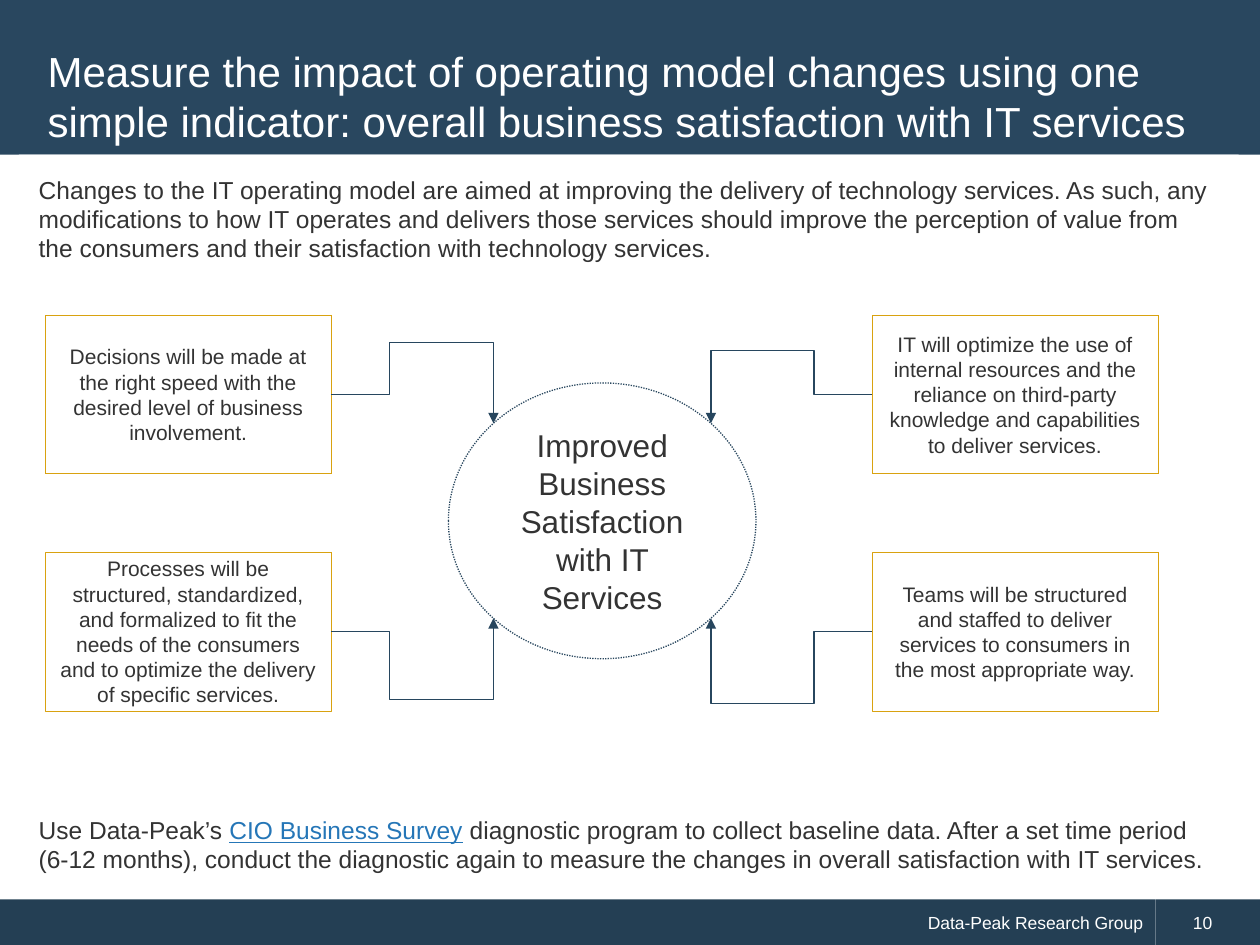
from pptx import Presentation
from pptx.dml.color import RGBColor
from pptx.enum.dml import MSO_LINE
from pptx.enum.shapes import MSO_CONNECTOR, MSO_SHAPE
from pptx.enum.text import MSO_ANCHOR, PP_ALIGN
from pptx.oxml.ns import qn
from pptx.util import Cm, Pt
from lxml import etree

RECT, OVAL = MSO_SHAPE.RECTANGLE, MSO_SHAPE.OVAL
ELBOW = MSO_CONNECTOR.ELBOW
TOP, MIDDLE = MSO_ANCHOR.TOP, MSO_ANCHOR.MIDDLE
LEFT, CENTER, RIGHT = PP_ALIGN.LEFT, PP_ALIGN.CENTER, PP_ALIGN.RIGHT
DOTTED = MSO_LINE.ROUND_DOT

NAVY, FOOT, GOLD, ARROW = "29475F", "243F54", "D9A210", "27465E"
WHITE, TEXT, LINK = "FFFFFF", "333333", "2576B7"

TITLE = ("Measure the impact of operating model changes using one simple indicator: "
         "overall business satisfaction with IT services")
INTRO = ("Changes to the IT operating model are aimed at improving the delivery of technology "
         "services. As such, any modifications to how IT operates and delivers those services "
         "should improve the perception of value from the consumers and their satisfaction "
         "with technology services.")
CLOSING = [
    ("Use Data-Peak’s ", {}),
    ("CIO Business Survey", {"color": LINK, "underline": True}),
    (" diagnostic program to collect baseline data. After a set time period (6-12 months), "
     "conduct the diagnostic again to measure the changes in overall satisfaction with IT "
     "services.", {}),
]
GOAL = "Improved Business Satisfaction with IT Services"
DRIVERS = [
    (0, 0, 6.9, "Decisions will be made at the right speed with the desired level of business "
                "involvement."),
    (0, 1, 14.1, "Processes will be structured, standardized, and formalized to fit the needs of "
                 "the consumers and to optimize the delivery of specific services."),
    (1, 0, 7.06, "IT will optimize the use of internal resources and the reliance on third-party "
                 "knowledge and capabilities to deliver services."),
    (1, 1, 14.18, "Teams will be structured and staffed to deliver services to consumers in the "
                  "most appropriate way."),
]

BOX_X, BOX_Y = (0.91, 17.58), (6.35, 11.13)
BOX_W, BOX_H = 5.77, 3.2
GOAL_BOX = (9.04, 7.72, 6.2, 5.56)
DIAGONAL = 0.5 ** 0.5
BEND = 0.36


def rgb(color):
    return RGBColor.from_string(color)


def write(sp, runs, size, color=TEXT, align=LEFT, **frame):
    tf = sp.text_frame
    for key, value in {"word_wrap": True, "vertical_anchor": MIDDLE, **frame}.items():
        setattr(tf, key, value)
    p = tf.paragraphs[0]
    p.alignment = align
    for text, fmt in [(runs, {})] if isinstance(runs, str) else runs:
        r = p.add_run()
        r.text = text
        font = {"name": "Arial", "size": Pt(size), "underline": False, **fmt}
        r.font.color.rgb = rgb(font.pop("color", color))
        for key, value in font.items():
            setattr(r.font, key, value)


def add_box(s, kind, at, fill=None, line=None, width=0.75):
    sp = s.shapes.add_shape(kind, *map(Cm, at))
    sp.shadow.inherit = False
    if fill:
        sp.fill.solid()
        sp.fill.fore_color.rgb = rgb(fill)
    else:
        sp.fill.background()
    if line:
        sp.line.color.rgb = rgb(line)
        sp.line.width = Pt(width)
        sp.line.dash_style = DOTTED
    else:
        sp.line.fill.background()
    return sp


def add_arrow(s, start, end, via_y):
    cx = s.shapes.add_connector(ELBOW, *map(Cm, start + end))
    cx.line.color.rgb = rgb(ARROW)
    cx.line.width = Pt(0.75)
    etree.SubElement(cx.line._get_or_add_ln(), qn("a:tailEnd"), type="triangle")
    sp_pr = cx._element.spPr
    etree.SubElement(sp_pr, qn("a:effectLst"))
    geom = sp_pr.find(qn("a:prstGeom"))
    geom.set("prst", "bentConnector4")
    guides = geom.find(qn("a:avLst"))
    if guides is None:
        guides = etree.SubElement(geom, qn("a:avLst"))
    rise = (via_y - start[1]) / (end[1] - start[1])
    for name, share in (("adj1", BEND), ("adj2", rise)):
        etree.SubElement(guides, qn("a:gd"), name=name, fmla=f"val {round(share * 100000)}")


def main():
    prs = Presentation()
    prs.slide_width, prs.slide_height = Cm(25.4), Cm(19.05)
    s = prs.slides.add_slide(prs.slide_layouts[6])

    footer = add_box(s, RECT, (0, 18.13, 23.29, 0.92), FOOT)
    write(footer, "Data-Peak Research Group", 10, WHITE, RIGHT)
    number = add_box(s, RECT, (23.29, 18.13, 2.11, 0.92), FOOT)
    write(number, "10", 10, WHITE, margin_left=Cm(0.76))
    add_box(s, RECT, (0, 0, 25.4, 3.12), NAVY)
    title = s.shapes.add_textbox(Cm(0.71), Cm(0.71), Cm(23.95), Cm(2.43))
    write(title, TITLE, 24, WHITE)

    goal = add_box(s, OVAL, GOAL_BOX, line=NAVY)
    write(goal, GOAL, 18, align=CENTER)

    sides = ("left", "top", "right", "bottom")
    insets = {f"margin_{side}": Cm(0.4) for side in sides}
    for y, h, runs in ((3.12, 2.59, INTRO), (16.03, 2.01, CLOSING)):
        sp = add_box(s, RECT, (0.38, y, 24.59, h), WHITE)
        write(sp, runs, 14, vertical_anchor=TOP, **insets)

    x, y, w, h = GOAL_BOX
    for col, row, via_y, text in DRIVERS:
        left, top = BOX_X[col], BOX_Y[row]
        sp = add_box(s, RECT, (left, top, BOX_W, BOX_H), line=GOLD, width=0.25)
        write(sp, text, 12, align=CENTER)
        start = (left + BOX_W * (1 - col), top + BOX_H / 2)
        end = (x + w / 2 * (1 + (2 * col - 1) * DIAGONAL),
               y + h / 2 * (1 + (2 * row - 1) * DIAGONAL))
        add_arrow(s, start, end, via_y)

    prs.save("out.pptx")


if __name__ == "__main__":
    main()
